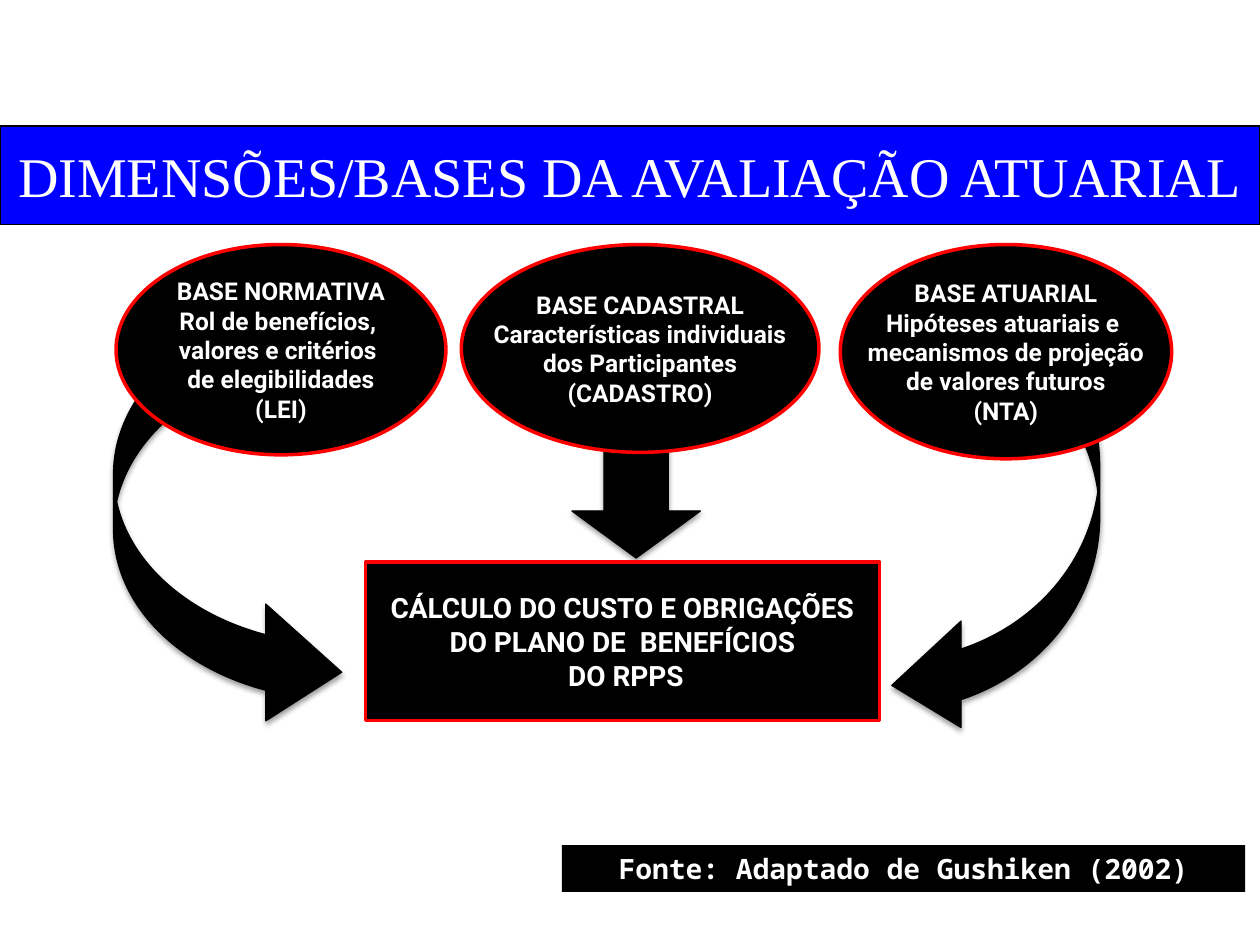
from lxml.etree import SubElement
from pptx import Presentation
from pptx.dml.color import RGBColor
from pptx.enum.shapes import MSO_SHAPE
from pptx.enum.text import MSO_ANCHOR, MSO_AUTO_SIZE, PP_ALIGN
from pptx.oxml.ns import qn
from pptx.util import Cm, Pt

BLACK = RGBColor(0x00, 0x00, 0x00)
WHITE = RGBColor(0xFF, 0xFF, 0xFF)
RED = RGBColor(0xFF, 0x00, 0x00)
BLUE = RGBColor(0x00, 0x00, 0xFF)

CURVE = (0.243, 0.512, 0.333)
ARROWS = [
    (MSO_SHAPE.CURVED_RIGHT_ARROW, (0, 1.19, 4.6, 8.61), CURVE, False),
    (MSO_SHAPE.DOWN_ARROW, (9.24, 1.95, 2.59, 4.37), (0.5, 0.366), False),
    (MSO_SHAPE.CURVED_RIGHT_ARROW, (15.69, 0.56, 4.19, 9.4), CURVE, True),
]
BASES = [
    ((0.05, 0, 6.65, 4.24), [
        "BASE NORMATIVA",
        "Rol de benefícios, \vvalores e critérios \vde elegibilidades",
        "(LEI)",
    ]),
    ((7.01, 0, 7.21, 4.19), [
        "BASE CADASTRAL",
        "Características individuais",
        "dos Participantes",
        "(CADASTRO)",
    ]),
    ((14.65, 0, 6.68, 4.32), [
        "BASE ATUARIAL",
        "Hipóteses atuariais e \vmecanismos de projeção\vde valores futuros",
        "(NTA)",
    ]),
]
RESULT = ["CÁLCULO DO CUSTO E OBRIGAÇÕES", "DO PLANO DE  BENEFÍCIOS", " DO RPPS"]


def write_text(shape, paragraphs, *, font, size, bold=False, wrap=False):
    frame = shape.text_frame
    frame.word_wrap = wrap
    frame.auto_size = MSO_AUTO_SIZE.NONE
    frame.vertical_anchor = MSO_ANCHOR.MIDDLE
    for index, text in enumerate(paragraphs):
        paragraph = frame.paragraphs[0] if index == 0 else frame.add_paragraph()
        paragraph.text = text
        paragraph.alignment = PP_ALIGN.CENTER
        paragraph.font.name = font
        paragraph.font.size = Pt(size)
        paragraph.font.bold = bold
        paragraph.font.color.rgb = WHITE


def paint(shape, fill, line=None, width=0.75):
    shape.fill.solid()
    shape.fill.fore_color.rgb = fill
    if line is None:
        shape.line.fill.background()
    else:
        shape.line.color.rgb = line
        shape.line.width = Pt(width)


def add_shape(slide, kind, box, **style):
    shape = slide.shapes.add_shape(kind, *(Cm(length) for length in box))
    shape.shadow.inherit = False
    paint(shape, **style)
    return shape


def within(box, part):
    return (box[0] + part[0], box[1] + part[1], part[2], part[3])


def add_soft_shadow(shape):
    effects = shape._element.spPr.find(qn("a:effectLst"))
    shadow = SubElement(effects, qn("a:outerShdw"), blurRad=str(Pt(3.1)),
                        dist=str(Pt(1.6)), dir="5400000", rotWithShape="0")
    color = SubElement(shadow, qn("a:srgbClr"), val=str(BLACK))
    SubElement(color, qn("a:alpha"), val="38000")


def place_title(slide, box):
    title = slide.shapes.title
    title.left, title.top, title.width, title.height = (Cm(length) for length in box)
    paint(title, BLUE, BLACK)
    write_text(title, ["DIMENSÕES/BASES DA AVALIAÇÃO ATUARIAL"],
               font="Times New Roman", size=32)


def place_arrows(slide, box):
    for kind, part, adjustments, flipped in ARROWS:
        arrow = add_shape(slide, kind, within(box, part), fill=BLACK, line=BLACK)
        for index, value in enumerate(adjustments):
            arrow.adjustments[index] = value
        if flipped:
            arrow._element.spPr.find(qn("a:xfrm")).set("flipH", "1")
        add_soft_shadow(arrow)


def place_bases(slide, box):
    for part, paragraphs in BASES:
        ellipse = add_shape(slide, MSO_SHAPE.OVAL, within(box, part),
                            fill=BLACK, line=RED, width=2)
        write_text(ellipse, paragraphs, font="Roboto", size=14, bold=True)


def place_result(slide, box):
    rectangle = add_shape(slide, MSO_SHAPE.RECTANGLE, box,
                          fill=BLACK, line=RED, width=2)
    write_text(rectangle, RESULT, font="Roboto", size=16, bold=True)


def place_source(slide, box):
    strip = add_shape(slide, MSO_SHAPE.RECTANGLE, box, fill=BLACK)
    write_text(strip, ["Fonte: Adaptado de Gushiken (2002)"],
               font="Noto Sans Mono", size=16, bold=True, wrap=True)


def main():
    presentation = Presentation()
    presentation.slide_width = Cm(25.4)
    presentation.slide_height = Cm(19.05)
    slide = presentation.slides.add_slide(presentation.slide_layouts[5])
    diagram = (2.29, 4.93, 21.33, 9.96)
    place_title(slide, (0, 2.54, 25.4, 1.98))
    place_arrows(slide, diagram)
    place_result(slide, within(diagram, (5.08, 6.4, 10.36, 3.2)))
    place_source(slide, (11.33, 17.04, 13.77, 0.94))
    place_bases(slide, diagram)
    presentation.save("out.pptx")


if __name__ == "__main__":
    main()
